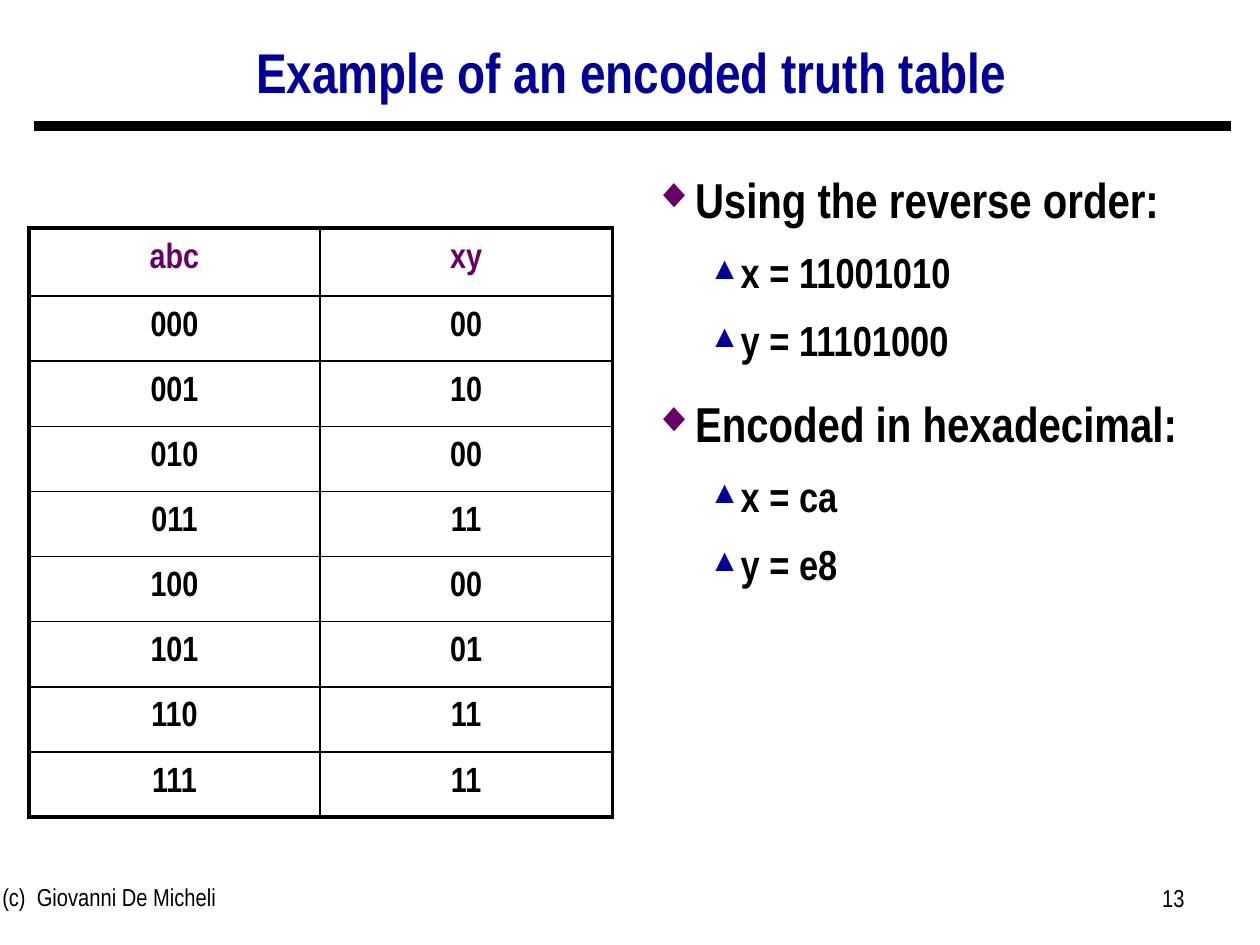
from lxml.etree import SubElement
from pptx import Presentation
from pptx.dml.color import RGBColor
from pptx.enum.shapes import MSO_CONNECTOR
from pptx.enum.text import MSO_ANCHOR, PP_ALIGN
from pptx.oxml.ns import qn
from pptx.util import Inches, Pt

FONT = "Arial Narrow"
BLACK = RGBColor(0x00, 0x00, 0x00)
WHITE = RGBColor(0xFF, 0xFF, 0xFF)
NAVY = RGBColor(0x00, 0x00, 0x99)
PURPLE = RGBColor(0x66, 0x00, 0x66)

TITLE = "Example of an encoded truth table"
BULLETS = [
    (0, "Using the reverse order:"),
    (1, "x = 11001010"),
    (1, "y = 11101000"),
    (0, "Encoded in hexadecimal:"),
    (1, "x = ca"),
    (1, "y = e8"),
]
LEVELS = [
    {"size": 28, "spacing": 1.25, "margin": 0.31, "indent": -0.31,
     "symbol": "◆", "color": PURPLE, "percent": 85},
    {"size": 24, "spacing": 1.1, "margin": 0.69, "indent": -0.25,
     "symbol": "▲", "color": NAVY, "percent": 75},
]
TRUTH_TABLE = [
    ("abc", "xy"),
    ("000", "00"),
    ("001", "10"),
    ("010", "00"),
    ("011", "11"),
    ("100", "00"),
    ("101", "01"),
    ("110", "11"),
    ("111", "11"),
]
COLUMN_WIDTHS = (2.31, 2.32)
HEADER_HEIGHT, ROW_HEIGHT = 0.54, 0.39
THIN, THICK = 1, 2.25
FOOTERS = [
    ("(c)  Giovanni De Micheli", (-0.08, 6.95, 3.17, 0.52), PP_ALIGN.LEFT),
    ("13", (7.17, 6.96, 2.33, 0.52), PP_ALIGN.RIGHT),
]


def add_text_frame(slide, box):
    frame = slide.shapes.add_textbox(*map(Inches, box)).text_frame
    frame.word_wrap = True
    return frame


def write(paragraph, text, size, color=BLACK, bold=False, align=None, spacing=None):
    paragraph.alignment = align
    if spacing:
        paragraph.line_spacing = spacing
    run = paragraph.add_run()
    run.text = text
    run.font.name = FONT
    run.font.size = Pt(size)
    run.font.bold = bold
    run.font.color.rgb = color


def add_space_before(paragraph):
    before = SubElement(paragraph._p.get_or_add_pPr(), qn("a:spcBef"))
    SubElement(before, qn("a:spcPct"), val="30000")


def add_bullet(paragraph, level):
    properties = paragraph._p.get_or_add_pPr()
    properties.set("marL", str(Inches(level["margin"])))
    properties.set("indent", str(Inches(level["indent"])))
    color = SubElement(properties, qn("a:buClr"))
    SubElement(color, qn("a:srgbClr"), val=str(level["color"]))
    SubElement(properties, qn("a:buSzPct"), val=str(level["percent"] * 1000))
    SubElement(properties, qn("a:buFont"), typeface=FONT)
    SubElement(properties, qn("a:buChar"), char=level["symbol"])


def add_borders(cell, widths):
    properties = cell._tc.get_or_add_tcPr()
    for side, width in zip("LRTB", widths):
        line = SubElement(properties, qn(f"a:ln{side}"), w=str(Pt(width)))
        fill = SubElement(line, qn("a:solidFill"))
        SubElement(fill, qn("a:srgbClr"), val=str(BLACK))


def add_truth_table(slide):
    row_count, column_count = len(TRUTH_TABLE), len(COLUMN_WIDTHS)
    height = HEADER_HEIGHT + ROW_HEIGHT * (row_count - 1)
    table = slide.shapes.add_table(
        row_count, column_count, Inches(0.23), Inches(1.81),
        Inches(sum(COLUMN_WIDTHS)), Inches(height)).table
    table.first_row = False
    table.horz_banding = False
    for column, width in zip(table.columns, COLUMN_WIDTHS):
        column.width = Inches(width)
    for i, values in enumerate(TRUTH_TABLE):
        table.rows[i].height = Inches(ROW_HEIGHT if i else HEADER_HEIGHT)
        for j, value in enumerate(values):
            cell = table.cell(i, j)
            outer_edges = (j == 0, j == column_count - 1, i == 0, i == row_count - 1)
            add_borders(cell, [THICK if outer else THIN for outer in outer_edges])
            cell.fill.solid()
            cell.fill.fore_color.rgb = WHITE
            paragraph = cell.text_frame.paragraphs[0]
            write(paragraph, value, 20, BLACK if i else PURPLE, True,
                  PP_ALIGN.CENTER, 1.25)
            add_space_before(paragraph)


def add_bullets(slide):
    frame = add_text_frame(slide, (5.09, 1.18, 4.67, 5.69))
    for i, (depth, text) in enumerate(BULLETS):
        paragraph = frame.add_paragraph() if i else frame.paragraphs[0]
        paragraph.level = depth
        level = LEVELS[depth]
        write(paragraph, text, level["size"], bold=True, spacing=level["spacing"])
        add_space_before(paragraph)
        add_bullet(paragraph, level)


def main():
    presentation = Presentation()
    presentation.slide_width = Inches(10)
    presentation.slide_height = Inches(7.5)
    slide = presentation.slides.add_slide(presentation.slide_layouts[6])

    rule = slide.shapes.add_connector(
        MSO_CONNECTOR.STRAIGHT, Inches(0.27), Inches(1), Inches(9.77), Inches(1))
    rule.line.color.rgb = BLACK
    rule.line.width = Pt(6)
    SubElement(rule._element.spPr, qn("a:effectLst"))

    title = add_text_frame(slide, (0.26, 0.22, 9.51, 0.75))
    title.vertical_anchor = MSO_ANCHOR.MIDDLE
    write(title.paragraphs[0], TITLE, 32, NAVY, True, PP_ALIGN.CENTER, 0.9)

    add_bullets(slide)
    for text, box, align in FOOTERS:
        write(add_text_frame(slide, box).paragraphs[0], text, 14, align=align)
    add_truth_table(slide)
    presentation.save("out.pptx")


if __name__ == "__main__":
    main()
